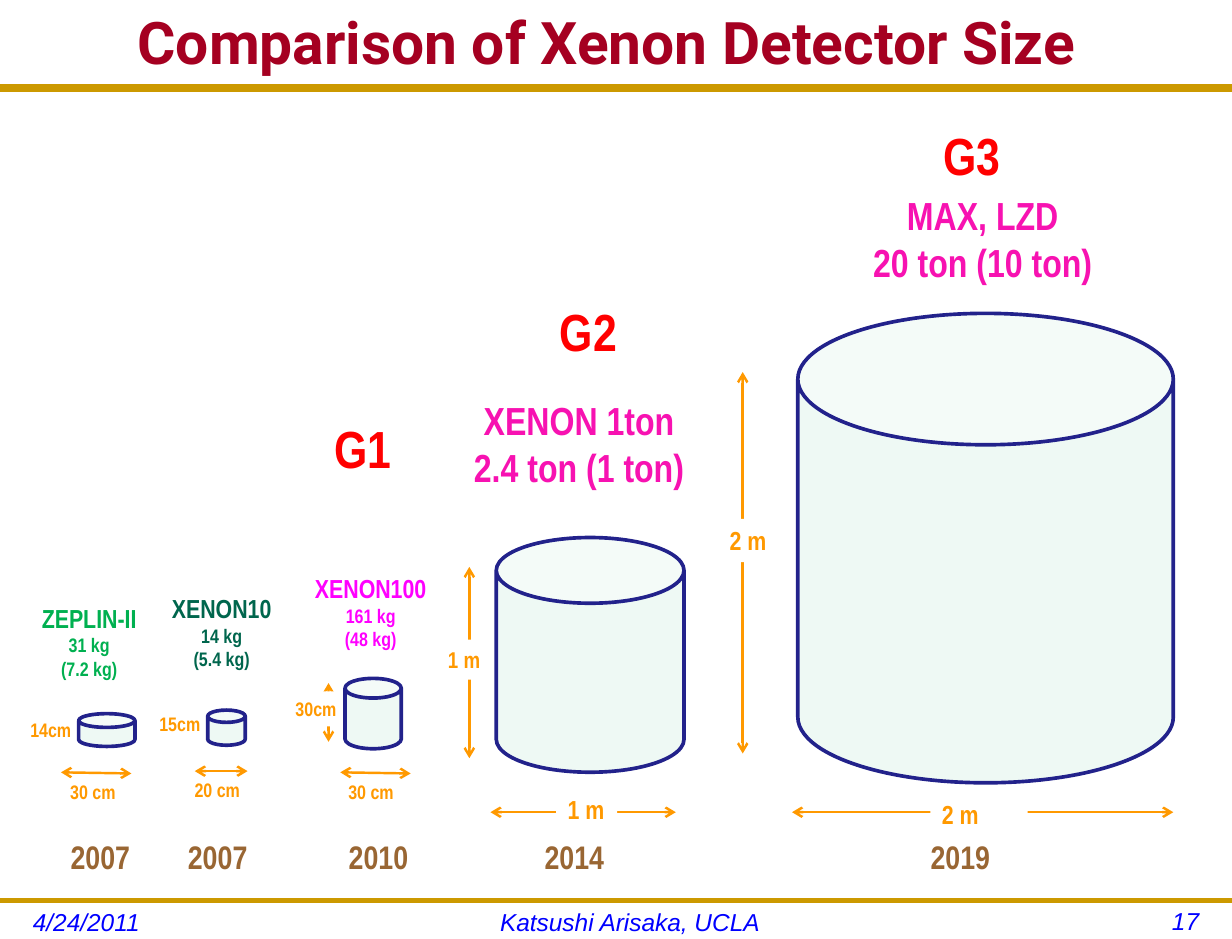
import pptx
import pptx.util
import pptx.dml.color
import pptx.enum.shapes
import pptx.enum.text
import pptx.oxml.ns
import lxml.etree
from pptx.util import Inches

GOLD, ORANGE, NAVY, MINT, WHITE = "CC9900", "FF9900", "22228B", "EEF9F4", "FFFFFF"
RED, PINK, BROWN, BLUE = "FF0000", "F712B1", "996633", "0000FF"
ALIGN = pptx.enum.text.PP_ALIGN
ANCHOR = pptx.enum.text.MSO_ANCHOR
SHAPE = pptx.enum.shapes.MSO_SHAPE

prs = pptx.Presentation()
prs.slide_width, prs.slide_height = Inches(10.5), Inches(8)
s = prs.slides.add_slide(prs.slide_layouts[6])


def rgb(color):
    return pptx.dml.color.RGBColor.from_string(color)


def add_text(text, x, y, w, h, size=12, color=ORANGE, font="Arial Narrow", bold=True,
             italic=False, align="LEFT", wrap=False, fill=None, anchor="TOP",
             inset=0.1, spacing=None, small=None):
    """Add one paragraph per line; lines after the first use size small if given."""
    if fill:
        sp = s.shapes.add_shape(SHAPE.RECTANGLE, Inches(x), Inches(y), Inches(w), Inches(h))
        sp.shadow.inherit = False
        sp.fill.solid()
        sp.fill.fore_color.rgb = rgb(fill)
        sp.line.fill.background()
    else:
        sp = s.shapes.add_textbox(Inches(x), Inches(y), Inches(w), Inches(h))
    tf = sp.text_frame
    tf.word_wrap = wrap
    tf.vertical_anchor = ANCHOR[anchor]
    tf.margin_left = tf.margin_right = Inches(inset)
    tf.margin_top = tf.margin_bottom = Inches(0.05)
    for i, line in enumerate(text.split("\n")):
        p = tf.add_paragraph() if i else tf.paragraphs[0]
        p.alignment = ALIGN[align]
        if spacing:
            p.line_spacing = spacing
        r = p.add_run()
        r.text = line
        r.font.name, r.font.bold, r.font.italic = font, bold, italic
        r.font.size = pptx.util.Pt(small if i and small else size)
        r.font.color.rgb = rgb(color)


def add_line(x1, y1, x2, y2, color=ORANGE, width=1.5, arrows=True):
    ln = s.shapes.add_connector(pptx.enum.shapes.MSO_CONNECTOR.STRAIGHT,
                                Inches(x1), Inches(y1), Inches(x2), Inches(y2))
    ln.line.color.rgb = rgb(color)
    ln.line.width = pptx.util.Pt(width)
    sp_pr = ln._element.spPr
    if arrows:
        outline = sp_pr.find(pptx.oxml.ns.qn("a:ln"))
        for tag in ("a:headEnd", "a:tailEnd"):
            lxml.etree.SubElement(outline, pptx.oxml.ns.qn(tag), type="arrow")
    lxml.etree.SubElement(sp_pr, pptx.oxml.ns.qn("a:effectLst"))


# Title, rules and footer
add_line(0, 0.75, 10.5, 0.75, GOLD, 4.5, arrows=False)
add_line(0, 7.67, 10.5, 7.67, GOLD, 3, arrows=False)
add_text("Comparison of Xenon Detector Size", 0.09, 0.03, 10.16, 0.75, size=36, color="A50021",
         font="Roboto", align="CENTER", wrap=True, anchor="MIDDLE", inset=0.11, spacing=0.8)
for text, x, y, w, align in [("4/24/2011", 0.17, 7.68, 2.08, "LEFT"),
                             ("Katsushi Arisaka, UCLA", 2.33, 7.68, 6.08, "CENTER"),
                             ("17", 8.5, 7.67, 1.83, "RIGHT")]:
    add_text(text, x, y, w, 0.32, size=15, color=BLUE, font="Arial", bold=False,
             italic=True, align=align, wrap=True, inset=0.11)

# Dimension arrows: widths, then heights
for x1, y1, x2, y2 in [(0.52, 6.58, 1.12, 6.59), (1.66, 6.57, 2.11, 6.57),
                       (2.9, 6.58, 3.5, 6.59), (4.18, 6.92, 5.76, 6.92),
                       (6.75, 6.92, 10, 6.92),
                       (2.8, 5.82, 2.8, 6.32), (4, 4.83, 4, 6.46), (6.33, 3.17, 6.33, 6.42)]:
    add_line(x1, y1, x2, y2)

# Dimension labels; the white ones interrupt their arrows
for text, x, y, w in [("14cm", 0.16, 6.07, 0.56), ("30 cm", 0.5, 6.6, 0.59),
                      ("20 cm", 1.56, 6.58, 0.7), ("30 cm", 2.87, 6.6, 0.6)]:
    add_text(text, x, y, w, 0.3)
for text, x, y, w, h, size, align, wrap in [
        ("15cm", 1.26, 6.02, 0.56, 0.3, 12, "LEFT", False),
        ("30cm", 2.42, 5.89, 0.66, 0.3, 12, "LEFT", True),
        ("1 m", 4.74, 6.71, 0.52, 0.37, 16, "LEFT", False),
        ("1 m", 3.58, 5.45, 0.75, 0.34, 14, "CENTER", True),
        ("2 m", 7.93, 6.75, 0.83, 0.37, 16, "LEFT", True),
        ("2 m", 6, 4.42, 0.75, 0.37, 16, "CENTER", True)]:
    add_text(text, x, y, w, h, size=size, align=align, wrap=wrap, fill=WHITE)

# Detector vessels
for x, y, w, h, rim in [(0.67, 6.08, 0.48, 0.28, 0.42), (1.77, 6.05, 0.32, 0.3, 0.35),
                        (2.94, 5.78, 0.48, 0.6, 0.35), (4.23, 4.58, 1.6, 2, 0.35),
                        (6.8, 2.67, 3.2, 4, 0.35)]:
    can = s.shapes.add_shape(SHAPE.CAN, Inches(x), Inches(y), Inches(w), Inches(h))
    can.adjustments[0] = rim
    can.shadow.inherit = False
    can.fill.solid()
    can.fill.fore_color.rgb = rgb(MINT)
    can.line.color.rgb = rgb(NAVY)
    can.line.width = pptx.util.Pt(2.25)

# Detector names and masses
for text, x, y, w, color in [("ZEPLIN-II\n31 kg\n(7.2 kg)", 0.25, 5.08, 1.02, "00B050"),
                             ("XENON10\n14 kg\n(5.4 kg)", 1.36, 5, 1.06, "00664D"),
                             ("XENON100\n161 kg\n(48 kg)", 2.58, 4.83, 1.16, "FF00FF")]:
    add_text(text, x, y, w, 0.77, size=16, small=12, color=color, align="CENTER")
for text, x, y, w in [("XENON 1ton\n2.4 ton (1 ton)", 3.93, 3.33, 2.01),
                      ("MAX, LZD\n20 ton (10 ton)", 7.33, 1.58, 2.09)]:
    add_text(text, x, y, w, 0.91, size=24, color=PINK, align="CENTER")

# Generations and years
for text, x, y in [("G1", 2.75, 3.5), ("G2", 4.67, 2.5), ("G3", 7.94, 1)]:
    add_text(text, x, y, 0.69, 0.64, size=32, color=RED, align="CENTER")
for year, x in [("2007", 0.5), ("2007", 1.5), ("2010", 2.87), ("2014", 4.54), ("2019", 7.83)]:
    add_text(year, x, 7.08, 0.71, 0.44, size=20, color=BROWN, align="CENTER")

prs.save("out.pptx")
